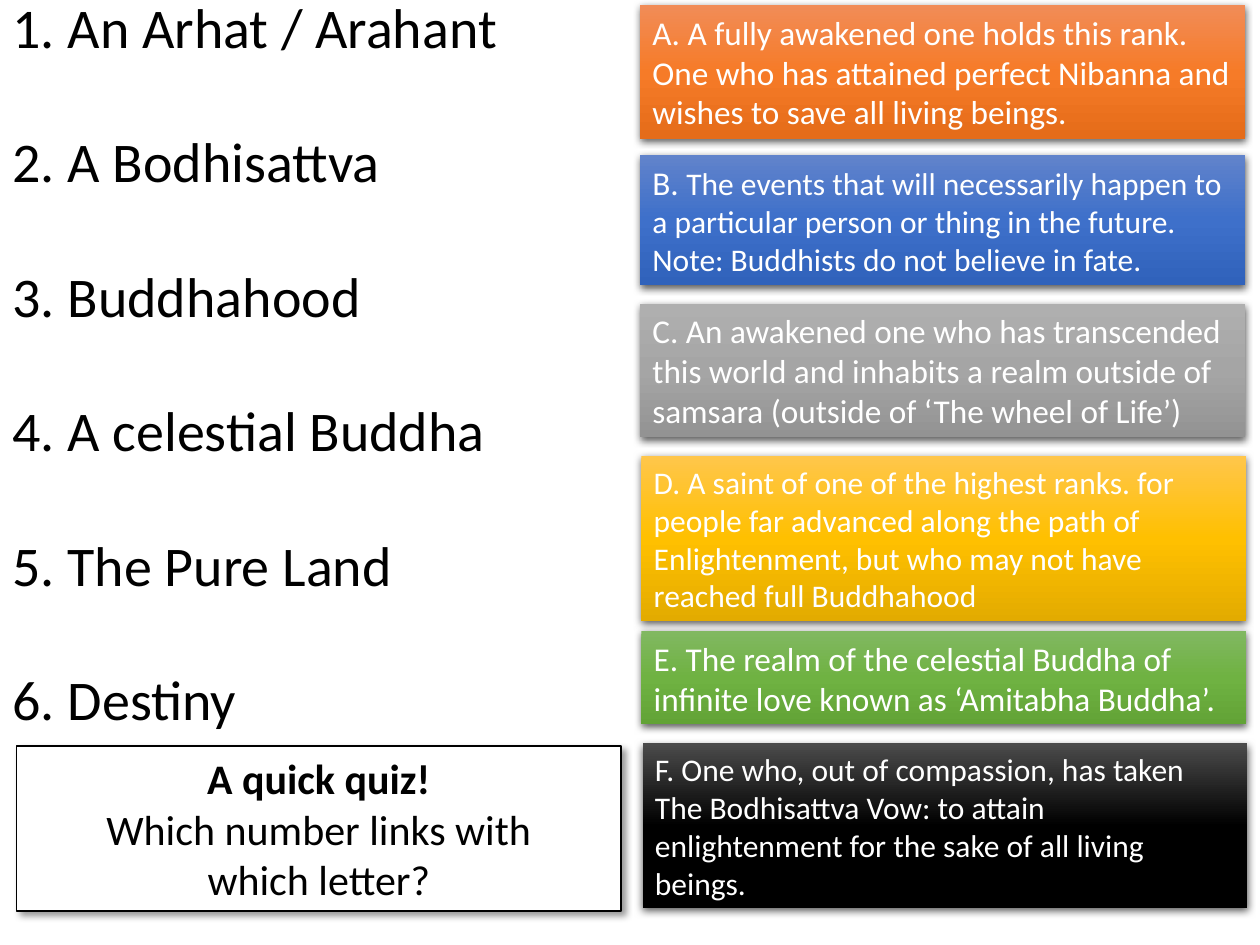
import copy
from dataclasses import dataclass

import pptx
import pptx.dml.color
import pptx.enum.text
import pptx.oxml
import pptx.oxml.ns
import pptx.util
from pptx.util import Inches

RGB = pptx.dml.color.RGBColor.from_string
ALIGN = pptx.enum.text.PP_ALIGN
ANCHOR = pptx.enum.text.MSO_ANCHOR


@dataclass(frozen=True)
class Theme:
    font: str = "Calibri"
    dark: str = "000000"
    light: str = "FFFFFF"
    term_size: float = 32
    term_gap: float = 38.4
    quiz_size: float = 24
    large: float = 19
    small: float = 18
    orange: tuple = ("F18C57", "F67B28", "E56C19")
    blue: tuple = ("6183CB", "3E70CA", "3062BB")
    grey: tuple = ("AFAFAF", "A5A5A5", "939393")
    gold: tuple = ("FFC64B", "FFC000", "E3AB00")
    green: tuple = ("81B861", "6FB242", "62A336")
    black: tuple = ("4B4B4B", "000000", "000000")


THEME = Theme()

TERMS = ["An Arhat / Arahant", "A Bodhisattva", "Buddhahood",
         "A celestial Buddha", "The Pure Land", "Destiny"]

DEFINITIONS = [
    ("A fully awakened one holds this rank. One who has attained perfect Nibanna "
     "and wishes to save all living beings.",
     THEME.large, THEME.large, THEME.orange, (5.08, 0.04, 4.8, 1.06)),
    ("The events that will necessarily happen to a particular person or thing in "
     "the future. Note: Buddhists do not believe in fate.",
     THEME.large, THEME.small, THEME.blue, (5.08, 1.23, 4.8, 1.03)),
    ("An awakened one who has transcended this world and inhabits a realm outside "
     "of samsara (outside of ‘The wheel of Life’)",
     THEME.large, THEME.large, THEME.grey, (5.08, 2.41, 4.8, 1.06)),
    ("A saint of one of the highest ranks. for people far advanced along the path "
     "of Enlightenment, but who may not have reached full Buddhahood",
     THEME.small, THEME.small, THEME.gold, (5.09, 3.62, 4.8, 1.31)),
    ("The realm of the celestial Buddha of infinite love known as ‘Amitabha Buddha’.",
     THEME.large, THEME.large, THEME.green, (5.09, 5.01, 4.8, 0.74)),
    ("One who, out of compassion, has taken The Bodhisattva Vow: to attain "
     "enlightenment for the sake of all living beings.",
     THEME.small, THEME.small, THEME.black, (5.1, 5.9, 4.8, 1.31)),
]


def add_text(paragraph, text, *, size, color, bold=False, align=ALIGN.LEFT, gap=0):
    paragraph.alignment = align
    paragraph.space_before = pptx.util.Pt(0)
    paragraph.space_after = pptx.util.Pt(gap)
    run = paragraph.add_run()
    run.text = text
    run.font.name = THEME.font
    run.font.size = pptx.util.Pt(size)
    run.font.bold = bold
    run.font.color.rgb = RGB(color)


def place(holder, box):
    holder.left, holder.top, holder.width, holder.height = map(Inches, box)


def prepare_frame(holder, anchor):
    frame = holder.text_frame
    frame.word_wrap = True
    frame.auto_size = pptx.enum.text.MSO_AUTO_SIZE.NONE
    frame.vertical_anchor = anchor
    return frame


def paragraphs_for(frame, texts):
    for index, text in enumerate(texts):
        yield (frame.add_paragraph() if index else frame.paragraphs[0]), text


def cast_shadow(shape, *, blur, distance, angle, opacity):
    shape.shadow.inherit = False
    effects = shape._element.spPr.find(pptx.oxml.ns.qn("a:effectLst"))
    effects.append(pptx.oxml.parse_xml(
        f'<a:outerShdw {pptx.oxml.ns.nsdecls("a")} blurRad="{pptx.util.Pt(blur)}" '
        f'dist="{pptx.util.Pt(distance)}" dir="{angle * 60000}" algn="ctr" '
        f'rotWithShape="0"><a:srgbClr val="{THEME.dark}">'
        f'<a:alpha val="{opacity * 1000}"/></a:srgbClr></a:outerShdw>'))


def fill_gradient(shape, colors):
    shape.fill.gradient()
    shape.fill.gradient_angle = 270
    stops = shape._element.spPr.find(".//" + pptx.oxml.ns.qn("a:gsLst"))
    stops.append(copy.deepcopy(stops[-1]))
    for stop, position, color in zip(shape.fill.gradient_stops, (0, 0.5, 1), colors):
        stop.position = position
        stop.color.rgb = RGB(color)


def build_terms(terms_holder, box):
    place(terms_holder, box)
    frame = prepare_frame(terms_holder, ANCHOR.TOP)
    numbered = [f"{number}. {term}" for number, term in enumerate(TERMS, 1)]
    for paragraph, text in paragraphs_for(frame, numbered):
        add_text(paragraph, text, size=THEME.term_size, color=THEME.dark,
                 gap=THEME.term_gap)
        properties = paragraph._p.get_or_add_pPr()
        properties.set("marL", "0")
        properties.set("indent", "0")
        properties.append(pptx.oxml.parse_xml(
            f'<a:buNone {pptx.oxml.ns.nsdecls("a")}/>'))


def build_quiz(quiz_holder, box):
    place(quiz_holder, box)
    quiz_holder.fill.solid()
    quiz_holder.fill.fore_color.rgb = RGB(THEME.light)
    quiz_holder.line.color.rgb = RGB(THEME.dark)
    quiz_holder.line.width = pptx.util.Pt(1)
    cast_shadow(quiz_holder, blur=4, distance=3, angle=45, opacity=40)
    frame = prepare_frame(quiz_holder, ANCHOR.MIDDLE)
    lines = ["A quick quiz!", "Which number links with", "which letter?"]
    for paragraph, text in paragraphs_for(frame, lines):
        add_text(paragraph, text, size=THEME.quiz_size, color=THEME.dark,
                 bold=text == lines[0], align=ALIGN.CENTER)


def build_definition(slide, letter, text, letter_size, size, colors, box):
    card = slide.shapes.add_shape(
        pptx.enum.shapes.MSO_SHAPE.RECTANGLE, *map(Inches, box))
    fill_gradient(card, colors)
    card.line.fill.background()
    cast_shadow(card, blur=4.5, distance=1.5, angle=90, opacity=63)
    paragraph = prepare_frame(card, ANCHOR.MIDDLE).paragraphs[0]
    add_text(paragraph, f"{letter}. ", size=letter_size, color=THEME.light)
    add_text(paragraph, text, size=size, color=THEME.light)


def main():
    deck = pptx.Presentation()
    deck.slide_width, deck.slide_height = Inches(10), Inches(7.5)
    slide = deck.slides.add_slide(deck.slide_layouts[1])
    build_terms(slide.placeholders[1], (0, -0.11, 5.63, 6.02))
    build_quiz(slide.shapes.title, (0.13, 5.92, 4.8, 1.31))
    for letter, definition in zip("ABCDEF", DEFINITIONS):
        build_definition(slide, letter, *definition)
    deck.save("out.pptx")


if __name__ == "__main__":
    main()
